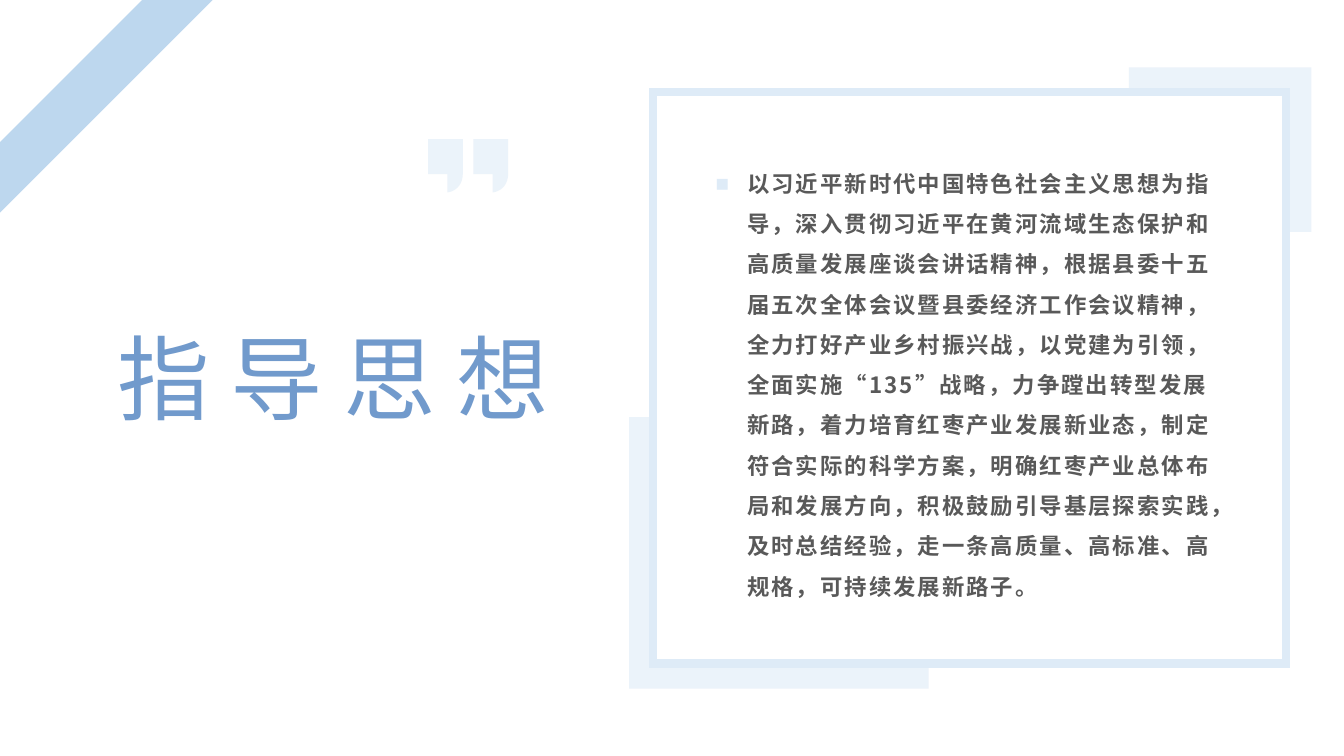
from dataclasses import dataclass

from lxml import etree
from pptx import Presentation
from pptx.dml.color import RGBColor
from pptx.enum.lang import MSO_LANGUAGE_ID
from pptx.enum.shapes import MSO_SHAPE
from pptx.enum.text import MSO_ANCHOR, PP_ALIGN
from pptx.oxml.ns import qn
from pptx.util import Pt

RECTANGLE = MSO_SHAPE.RECTANGLE
STRIPE = MSO_SHAPE.DIAGONAL_STRIPE
MIDDLE = MSO_ANCHOR.MIDDLE
LEFT, CENTER = PP_ALIGN.LEFT, PP_ALIGN.CENTER
CHINESE = MSO_LANGUAGE_ID.SIMPLIFIED_CHINESE

TITLE = "指 导 思 想"
GUIDELINE = (
    "以习近平新时代中国特色社会主义思想为指导，深入贯彻习近平在黄河流域生态保护和"
    "高质量发展座谈会讲话精神，根据县委十五届五次全体会议暨县委经济工作会议精神，"
    "全力打好产业乡村振兴战，以党建为引领，全面实施“135”战略，力争蹚出转型发展"
    "新路，着力培育红枣产业发展新业态，制定符合实际的科学方案，明确红枣产业总体布"
    "局和发展方向，积极鼓励引导基层探索实践，及时总结经验，走一条高质量、高标准、"
    "高规格，可持续发展新路子。"
)


@dataclass(frozen=True)
class Theme:
    font: str = "Noto Sans CJK SC"
    bullet_font: str = "Arial"
    title_size: float = 66
    body_size: float = 16
    title: str = "719ACC"
    body: str = "595959"
    pale: str = "DEEBF7"
    stripe: str = "BDD7EE"
    paper: str = "FFFFFF"


def add_xml(parent, tag, **attributes):
    return etree.SubElement(parent, qn(tag), attributes)


def format_span(span, font, size, color, bold=False, spacing=0):
    """Style a run for both Latin and East Asian text; spacing is in points."""
    span.font.name = font
    span.font.size = Pt(size)
    span.font.bold = bold
    span.font.color.rgb = RGBColor.from_string(color)
    span.font.language_id = CHINESE
    properties = span.font._element if hasattr(span.font, "_element") else span._r.get_or_add_rPr()
    add_xml(properties, "a:ea", typeface=font)
    if spacing:
        properties.set("spc", str(round(spacing * 100)))


def curve_points(start, first, second, end, steps=12):
    """Points along a cubic Bézier curve, without its start."""
    points = []
    for step in range(1, steps + 1):
        t = step / steps
        weights = ((1 - t) ** 3, 3 * t * (1 - t) ** 2, 3 * t * t * (1 - t), t ** 3)
        corners = zip(start, first, second, end)
        points.append(tuple(sum(w * c for w, c in zip(weights, axis)) for axis in corners))
    return points


class SlideBuilder:
    def __init__(self, page, theme):
        self.page = page
        self.theme = theme

    def paint(self, shape, fill, opacity=100, line=None, line_width=0):
        shape.shadow.inherit = False
        shape.fill.solid()
        shape.fill.fore_color.rgb = RGBColor.from_string(fill)
        if opacity < 100:
            color = shape.element.spPr.find(qn("a:solidFill"))[0]
            add_xml(color, "a:alpha", val=str(opacity * 1000))
        if line is None:
            shape.line.fill.background()
        else:
            shape.line.color.rgb = RGBColor.from_string(line)
            shape.line.width = Pt(line_width)
            add_xml(shape.element.spPr.find(qn("a:ln")), "a:miter", lim="800000")

    def preset(self, kind, left, top, width, height, adjustment=None, **style):
        shape = self.page.shapes.add_shape(kind, Pt(left), Pt(top), Pt(width), Pt(height))
        if adjustment is not None:
            shape.adjustments[0] = adjustment
        self.paint(shape, **style)

    def outline(self, points, **style):
        corners = [(Pt(x), Pt(y)) for x, y in points]
        builder = self.page.shapes.build_freeform(*corners[0])
        builder.add_line_segments(corners[1:], close=True)
        self.paint(builder.convert_to_shape(), **style)

    def quote_mark(self, left, top, **style):
        right, bottom = left + 24.8, top + 38
        stem, notch = left + 13.7, top + 25
        tail = curve_points((right, top + 24.4), (right, top + 36),
                            (left + 15.3, bottom), (stem, bottom))
        self.outline([(stem, notch), (left, notch), (left, top), (right, top),
                      (right, top + 24.4), *tail], **style)

    def text(self, content, left, top, width, height, align=LEFT,
             line_spacing=1.0, space_after=0, bullet_indent=0, **style):
        box = self.page.shapes.add_textbox(Pt(left), Pt(top), Pt(width), Pt(height))
        frame = box.text_frame
        frame.word_wrap = True
        frame.vertical_anchor = MIDDLE
        para = frame.paragraphs[0]
        para.alignment = align
        para.line_spacing = line_spacing
        para.space_after = Pt(space_after)
        span = para.add_run()
        span.text = content
        format_span(span, self.theme.font, **style)
        if bullet_indent:
            self.square_bullet(para, bullet_indent)

    def square_bullet(self, para, indent):
        properties = para._p.get_or_add_pPr()
        properties.set("marL", str(Pt(indent)))
        properties.set("indent", str(-Pt(indent)))
        properties.set("hangingPunct", "1")
        add_xml(add_xml(properties, "a:buClr"), "a:srgbClr", val=self.theme.pale)
        add_xml(properties, "a:buFont", typeface=self.theme.bullet_font)
        add_xml(properties, "a:buChar", char="■")


def main():
    theme = Theme()
    deck = Presentation()
    deck.slide_width, deck.slide_height = Pt(960), Pt(540)
    slide = SlideBuilder(deck.slides.add_slide(deck.slide_layouts[6]), theme)
    veil = {"fill": theme.pale, "opacity": 60}

    slide.outline([(449.3, 298), (466.6, 298), (466.6, 474.5), (663.3, 474.5),
                   (663.3, 491.8), (449.3, 491.8)], **veil)
    slide.preset(RECTANGLE, 806.4, 48.2, 130.3, 117.4, **veil)
    slide.preset(RECTANGLE, 466.6, 65.7, 452, 408.2,
                 fill=theme.paper, line=theme.pale, line_width=6)
    slide.text(GUIDELINE, 504, 99.4, 378, 341.3, line_spacing=1.5, space_after=4,
               bullet_indent=22.5, size=theme.body_size, color=theme.body,
               bold=True, spacing=1.5)
    for left in (338.2, 305.8):
        slide.quote_mark(left, 99.4, **veil)
    slide.preset(STRIPE, -0.7, 0, 152.6, 152.6, adjustment=0.67, fill=theme.stripe)
    slide.text(TITLE, 35.3, 60.5, 405.4, 427.7, align=CENTER, line_spacing=0.9,
               size=theme.title_size, color=theme.title)
    deck.save("out.pptx")


if __name__ == "__main__":
    main()
